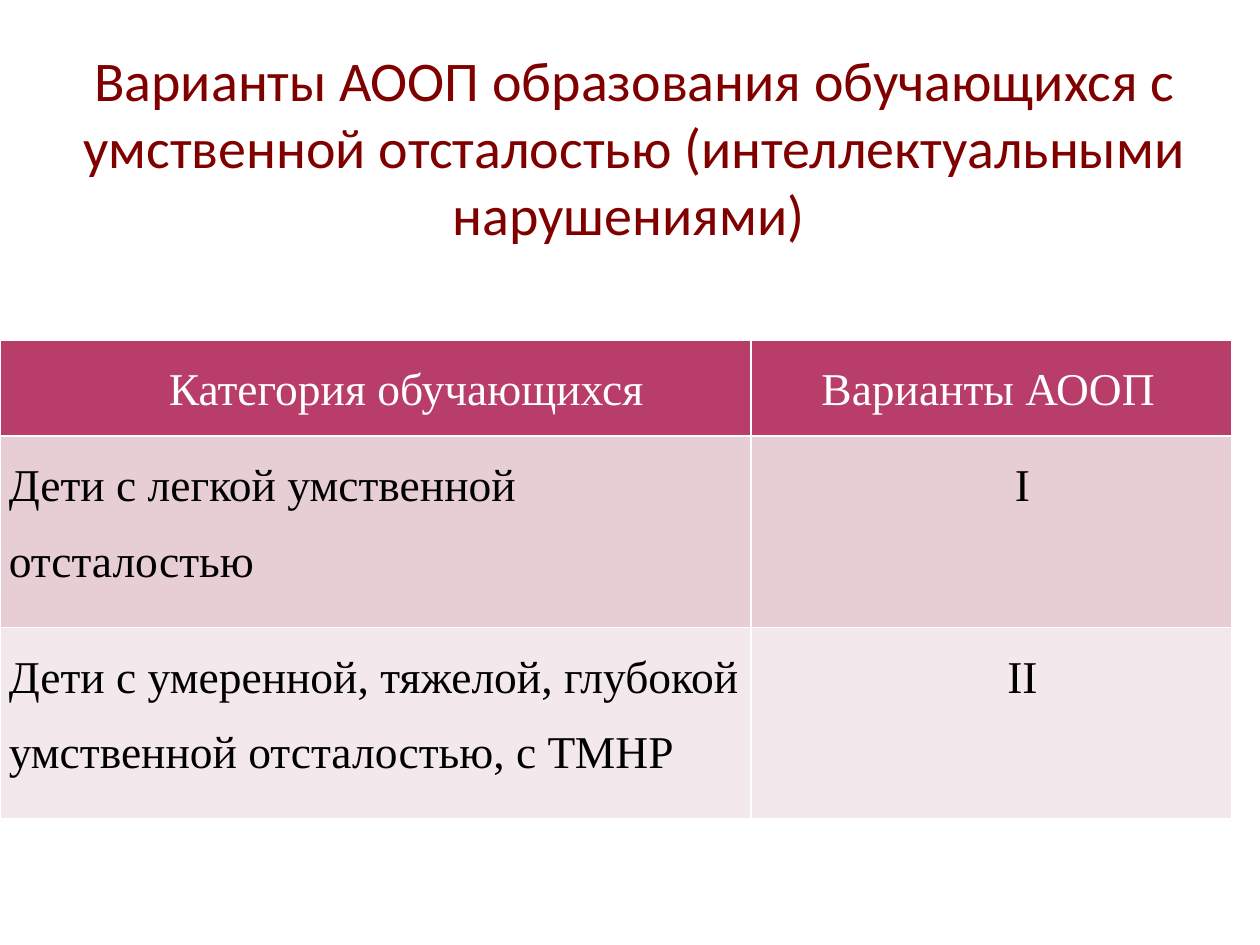
from pptx import Presentation
from pptx import util as u
from pptx.dml.color import RGBColor
from pptx.enum import text

MAROON = RGBColor(0x80, 0x00, 0x00)
WHITE = RGBColor(0xFF, 0xFF, 0xFF)
BLACK = RGBColor(0x00, 0x00, 0x00)
CRIMSON = RGBColor(0xB8, 0x3D, 0x68)
ROSE = RGBColor(0xE6, 0xCE, 0xD4)
PALE_ROSE = RGBColor(0xF3, 0xE8, 0xEB)

LEFT, CENTER = text.PP_ALIGN.LEFT, text.PP_ALIGN.CENTER
COLUMNS = [5.96, 3.82]
ROW = 0.76
INDENT = 0.49


def add_run(para, wording, font, size, color):
    span = para.add_run()
    span.text = wording
    span.font.name = font
    span.font.size = u.Pt(size)
    span.font.bold = False
    span.font.color.rgb = color


deck = Presentation()
deck.slide_width, deck.slide_height = u.Inches(10), u.Inches(7.5)
page = deck.slides.add_slide(deck.slide_layouts[6])

# Title
box = page.shapes.add_textbox(u.Inches(0.51), u.Inches(0.31), u.Inches(9.06), u.Inches(1.7))
frame = box.text_frame
frame.word_wrap = True
frame.vertical_anchor = text.MSO_ANCHOR.MIDDLE
para = frame.paragraphs[0]
para.alignment = CENTER
add_run(para, "Варианты АООП образования обучающихся с умственной отсталостью "
        "(интеллектуальными нарушениями) ", "Calibri", 32, MAROON)

# Table: height in row units, fill, text colour, then (wording, alignment, first-line indent)
rows = [
    (1, CRIMSON, WHITE, [("Категория обучающихся", CENTER, INDENT),
                         ("Варианты АООП", LEFT, INDENT)]),
    (2, ROSE, BLACK, [("Дети с легкой умственной отсталостью", LEFT, 0),
                      ("I", CENTER, INDENT)]),
    (2, PALE_ROSE, BLACK, [("Дети с умеренной, тяжелой, глубокой умственной отсталостью, с ТМНР", LEFT, 0),
                           ("II", CENTER, INDENT)]),
]
units = sum(row[0] for row in rows)
table = page.shapes.add_table(len(rows), len(COLUMNS), 0, u.Inches(2.7),
                              u.Inches(sum(COLUMNS)), u.Inches(units * ROW)).table
for column, width in zip(table.columns, COLUMNS):
    column.width = u.Inches(width)

for r, (height, fill, color, entries) in enumerate(rows):
    table.rows[r].height = u.Inches(height * ROW)
    for c, (wording, alignment, indent) in enumerate(entries):
        cell = table.cell(r, c)
        cell.fill.solid()
        cell.fill.fore_color.rgb = fill
        cell.margin_left = cell.margin_right = u.Inches(0.07)
        cell.margin_top = cell.margin_bottom = 0
        para = cell.text_frame.paragraphs[0]
        para.alignment = alignment
        para.line_spacing = 1.5
        properties = para._p.get_or_add_pPr()
        properties.set("marL", "0")
        properties.set("indent", str(u.Inches(indent)))
        add_run(para, wording, "Times New Roman", 26, color)

deck.save("out.pptx")
